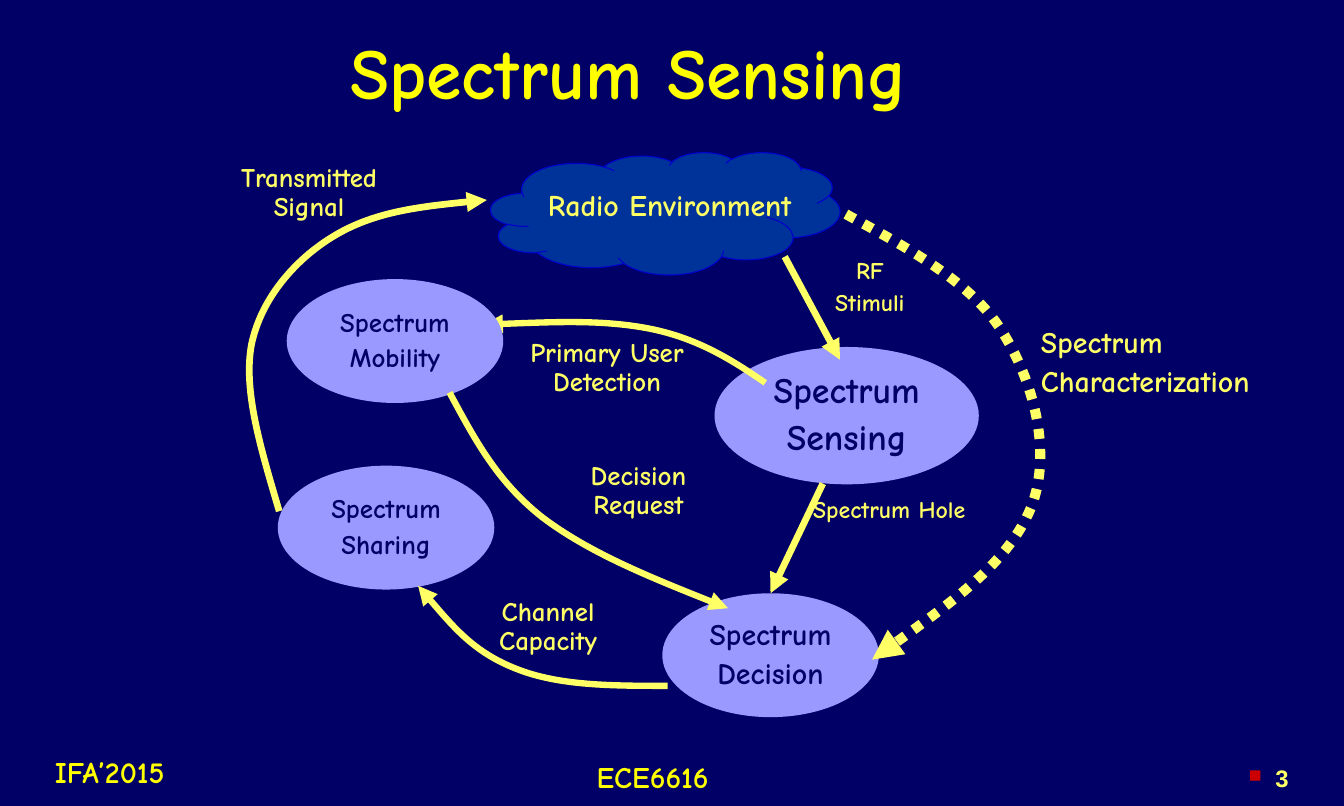
from dataclasses import dataclass

from pptx import Presentation
from pptx.dml.color import RGBColor
from pptx.enum import dml, shapes, text
from pptx.oxml.ns import qn
from pptx.util import Pt


@dataclass(frozen=True)
class Theme:
    navy: str = "000066"
    lilac: str = "9999FF"
    cloud: str = "003399"
    cloud_edge: str = "0000CC"
    pale: str = "FFFF66"
    bright: str = "FFFF00"
    bullet: str = "CC0000"
    font: str = "Comic Neue"
    number_font: str = "Arial"
    title: int = 48
    large: int = 24
    medium: int = 20
    label: int = 18
    small: int = 16


THEME = Theme()
CENTER, LEFT, RIGHT = (text.PP_ALIGN.CENTER, text.PP_ALIGN.LEFT,
                       text.PP_ALIGN.RIGHT)
TOP, MIDDLE = text.MSO_ANCHOR.TOP, text.MSO_ANCHOR.MIDDLE


def apply_format(target, values):
    for name, value in values.items():
        setattr(target, name, value)


def add_child(parent, tag, **attributes):
    child = parent.makeelement(qn(tag), attributes)
    parent.append(child)
    return child


def write(frame, lines, size, color, align=CENTER, anchor=TOP, wrap=False,
          font=THEME.font):
    apply_format(frame, {"word_wrap": wrap, "vertical_anchor": anchor})
    for index, line in enumerate(lines):
        paragraph = frame.add_paragraph() if index else frame.paragraphs[0]
        apply_format(paragraph, {"alignment": align, "line_spacing": 0.9})
        if index:
            paragraph.space_before = Pt(0.24 * size)
        run = paragraph.add_run()
        run.text = line
        apply_format(run.font, {"name": font, "size": Pt(size), "bold": True})
        run.font.color.rgb = RGBColor.from_string(color)


def add_label(slide, lines, box, size, color=THEME.pale, **options):
    shape = slide.shapes.add_textbox(*map(Pt, box))
    write(shape.text_frame, lines, size, color, **options)
    return shape


def paint(shape, fill=None, line=None, width=0):
    shape.shadow.inherit = False
    for part, color in ((shape.fill, fill), (shape.line.fill, line)):
        if color:
            part.solid()
            part.fore_color.rgb = RGBColor.from_string(color)
        else:
            part.background()
    if line:
        shape.line.width = Pt(width)


def add_stage(slide, name, box, size, line=None):
    ellipse = slide.shapes.add_shape(shapes.MSO_SHAPE.OVAL, *map(Pt, box))
    paint(ellipse, THEME.lilac, line, 3)
    write(ellipse.text_frame, ["Spectrum", name], size, THEME.navy,
          anchor=MIDDLE)


def add_arrowhead(arrow):
    add_child(arrow.get_or_add_ln(), "a:tailEnd", type="triangle")


def add_straight_arrow(slide, start, end):
    arrow = slide.shapes.add_connector(shapes.MSO_CONNECTOR.STRAIGHT,
                                       *map(Pt, start + end))
    arrow.line.color.rgb = RGBColor.from_string(THEME.pale)
    arrow.line.width = Pt(4.5)
    add_arrowhead(arrow)
    add_child(arrow._element.spPr, "a:effectLst")


def add_curve(slide, points, closed=False):
    """Draw cubic curves: a start, then two handles and an end for each."""
    vertices = [(Pt(x), Pt(y)) for x, y in points]
    builder = slide.shapes.build_freeform(*vertices[0])
    builder.add_line_segments(vertices[1:], close=closed)
    shape = builder.convert_to_shape()
    segments = list(shape._element.iter(qn("a:lnTo")))
    for first in range(0, len(points) - 1, 3):
        curve = segments[first].makeelement(qn("a:cubicBezTo"), {})
        segments[first].addprevious(curve)
        for segment in segments[first:first + 3]:
            curve.append(segment[0])
            segment.getparent().remove(segment)
    return shape


def add_curved_arrow(slide, points, width=4.25, dash=None):
    arrow = add_curve(slide, points)
    paint(arrow, line=THEME.pale, width=width)
    if dash:
        arrow.line.dash_style = dash
    add_arrowhead(arrow)


def add_cloud(slide):
    cloud = slide.shapes.add_shape(shapes.MSO_SHAPE.CLOUD_CALLOUT,
                                   *map(Pt, (328.5, 102, 234, 82)))
    cloud.adjustments[0], cloud.adjustments[1] = -0.04, 0.05
    paint(cloud, THEME.cloud, THEME.cloud_edge, 0.75)
    bubble_cover = add_curve(slide, [
        (411, 171), (406, 173), (400, 174), (394, 176),
        (385, 177), (372, 175), (370, 171), (364, 160), (372, 157), (383, 154),
        (391, 141), (412, 143), (424, 143), (436, 141), (446, 142), (441, 152),
        (430, 160), (420, 162), (411, 171)], closed=True)
    paint(bubble_cover, THEME.cloud)
    add_label(slide, ["Radio Environment"], (336, 118, 225, 41), THEME.medium,
              anchor=MIDDLE)


def add_slide_number(slide):
    number = add_label(slide, ["3"], (810, 510, 60, 24), THEME.small,
                       align=RIGHT, wrap=True, font=THEME.number_font)
    properties = number.text_frame.paragraphs[0]._p.get_or_add_pPr()
    properties.set("marL", str(Pt(18)))
    properties.set("indent", str(-Pt(18)))
    add_child(add_child(properties, "a:buClr"), "a:srgbClr", val=THEME.bullet)
    add_child(properties, "a:buSzPct", val="75000")
    add_child(properties, "a:buFont", typeface="Wingdings")
    add_child(properties, "a:buChar", char="n")


def main():
    presentation = Presentation()
    apply_format(presentation, {"slide_width": Pt(900),
                                "slide_height": Pt(540)})
    slide = presentation.slides.add_slide(presentation.slide_layouts[6])
    slide.background.fill.solid()
    slide.background.fill.fore_color.rgb = RGBColor.from_string(THEME.navy)

    for footer, left, top in (("IFA’2015", 21.5, 504), ("ECE6616", 385, 507.5)):
        add_label(slide, [footer], (left, top, 104, 29.5), THEME.medium,
                  THEME.bright)
    add_slide_number(slide)
    add_label(slide, ["Spectrum Sensing"], (227.5, 18, 703, 66), THEME.title,
              THEME.bright, align=LEFT, anchor=MIDDLE)

    add_stage(slide, "Sharing", (186, 312, 145, 83), THEME.label)
    add_stage(slide, "Sensing", (480, 234, 174, 89), THEME.large, THEME.lilac)
    add_stage(slide, "Decision", (443.5, 397.5, 145, 83), THEME.medium)
    add_straight_arrow(slide, (525.5, 172), (562.5, 241))
    add_straight_arrow(slide, (551, 324), (516, 397.5))
    add_curved_arrow(slide, [
        (447, 459.5), (410, 459.5), (374, 459.5), (345.5, 448),
        (317.5, 437), (299, 415), (280, 392.5)])
    add_curved_arrow(slide, [
        (512.5, 256.5), (490, 241), (467.5, 227), (436.5, 220.5),
        (404.5, 214), (364.5, 216), (324, 217.5)])
    add_curved_arrow(slide, [
        (566.5, 143.5), (608.5, 166.5), (651, 189.5), (671, 222),
        (692, 255), (705, 303), (690.5, 340), (675.5, 376.5), (630, 409),
        (584, 442)], 6.75, dml.MSO_LINE.ROUND_DOT)
    add_cloud(slide)
    add_stage(slide, "Mobility", (192, 187, 145, 83), THEME.label)
    add_curved_arrow(slide, [
        (301, 263), (317, 292.5), (332, 322), (363, 346.5),
        (394, 370), (440.5, 389), (487.5, 407.5)])
    add_curved_arrow(slide, [
        (187, 342.5), (175, 301.5), (162.5, 261.5), (168.5, 230.5),
        (175, 200), (197.5, 174), (223, 158.5), (250, 142), (288, 137.5),
        (326, 134)], 4.5)

    for lines, box, size in (
            (["Channel Capacity"], (306, 397.5, 122, 46), THEME.label),
            (["Primary User Detection"], (330, 224, 153, 46), THEME.label),
            (["Decision Request"], (366, 306, 123, 46), THEME.label),
            (["Transmitted Signal"], (138, 106.5, 138, 46), THEME.label),
            (["RF", "Stimuli"], (499, 170, 167, 46), THEME.small),
            (["Spectrum Hole"], (534, 330, 123, 42), THEME.small)):
        add_label(slide, lines, box, size, wrap=True)
    add_label(slide, ["Spectrum", "Characterization"], (690, 216, 174, 55.5),
              THEME.medium, align=LEFT)

    presentation.save("out.pptx")


if __name__ == "__main__":
    main()
